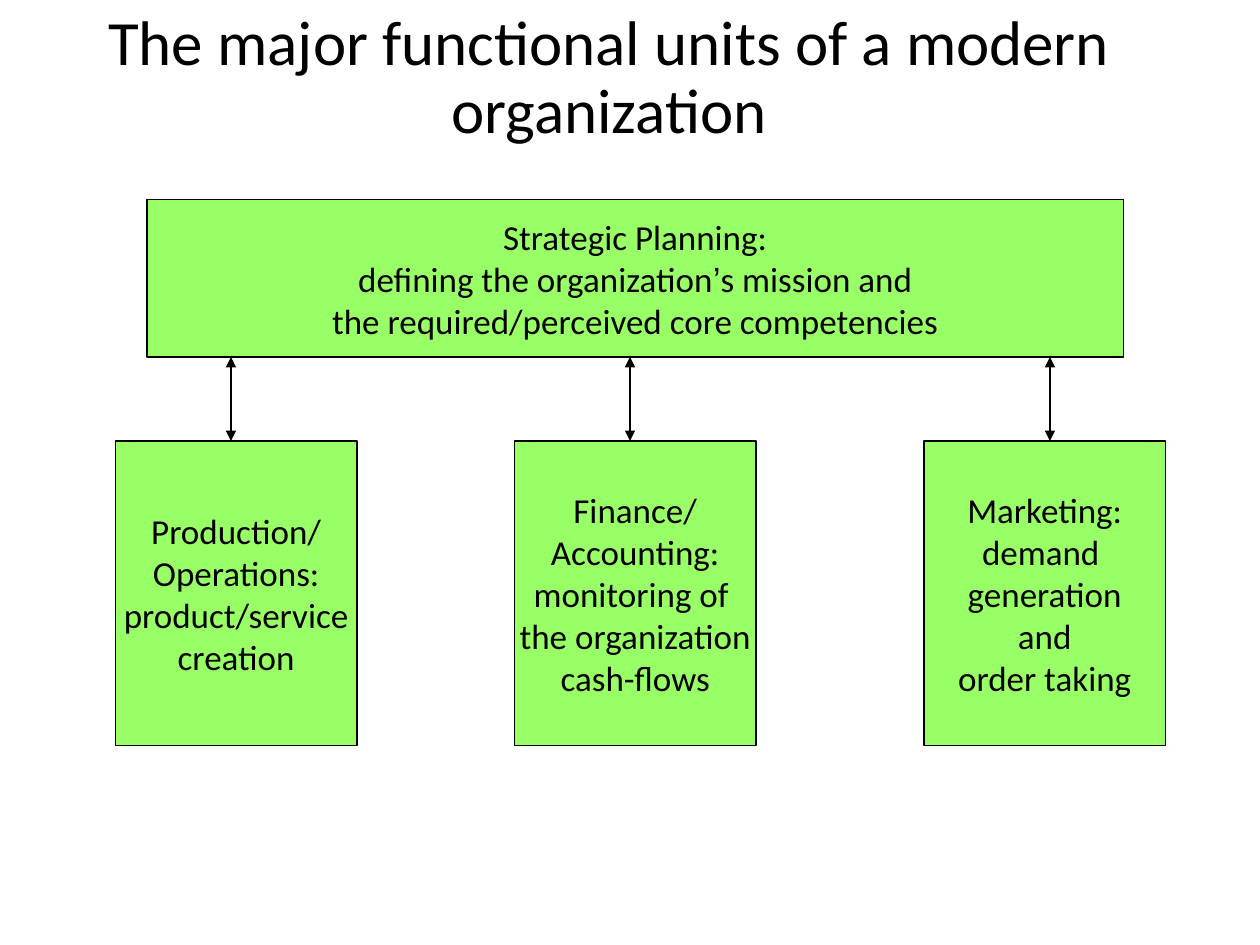
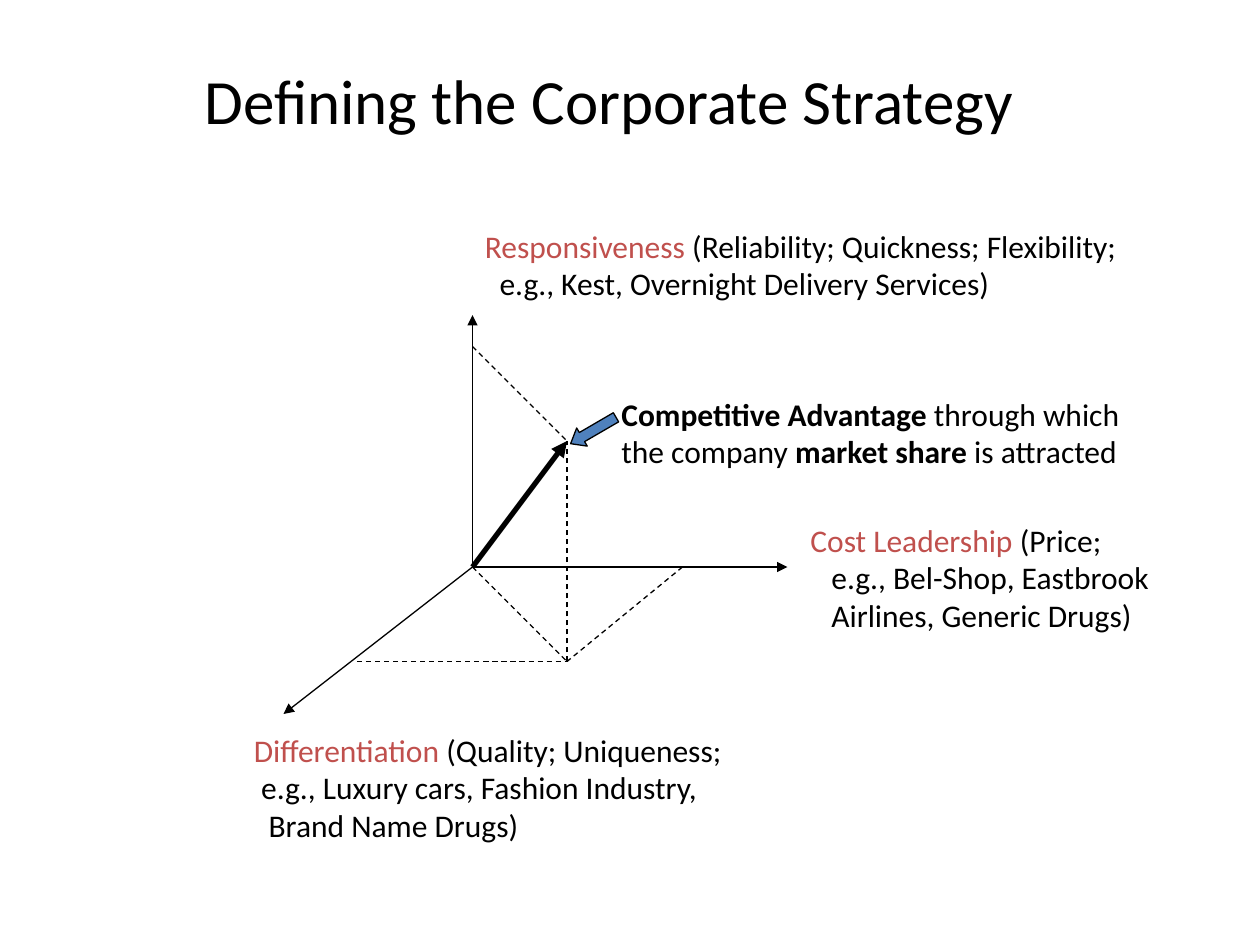
import lxml.etree
import pptx
import pptx.dml.color
import pptx.enum.dml
import pptx.enum.shapes
import pptx.enum.text
import pptx.oxml.ns
import pptx.util

PX = 7620
COLORS = {"ink": "000000", "unit": "99FF66", "dimension": "C0504D", "pointer": "4F81BD"}
BOLD = {"bold": True}
DIMENSION = {"color": "dimension"}
ALIGN = pptx.enum.text.PP_ALIGN
ANCHOR = pptx.enum.text.MSO_ANCHOR
SHAPE = pptx.enum.shapes.MSO_SHAPE


def rgb(name):
    return pptx.dml.color.RGBColor.from_string(COLORS[name])


def emu(*lengths):
    return [pptx.util.Emu(length * PX) for length in lengths]


class Deck:
    font = "Calibri"

    def __init__(self, width, height):
        self.prs = pptx.Presentation()
        self.prs.slide_width, self.prs.slide_height = emu(width, height)
        self.slide = None

    def add_slide(self, title, top, line_spacing=1.0):
        self.slide = self.prs.slides.add_slide(self.prs.slide_layouts[6])
        heading = self.slide.shapes.add_textbox(*emu(70, top, 1020, 150))
        self.fill_text(heading, [title], 36, align=ALIGN.CENTER, line_spacing=line_spacing,
                       vertical_anchor=ANCHOR.MIDDLE, word_wrap=True)

    def fill_text(self, holder, lines, size, indents=(), align=ALIGN.LEFT, line_spacing=1.0, **frame_format):
        frame = holder.text_frame
        for name, value in frame_format.items():
            setattr(frame, name, value)
        for index, line in enumerate(lines):
            paragraph = frame.paragraphs[0] if index == 0 else frame.add_paragraph()
            paragraph.alignment = align
            paragraph.line_spacing = line_spacing
            if index < len(indents):
                paragraph._p.get_or_add_pPr().set("marL", str(indents[index] * PX))
            for piece in [line] if isinstance(line, str) else line:
                text, changes = (piece, {}) if isinstance(piece, str) else piece
                style = {"name": self.font, "size": pptx.util.Pt(size), "bold": False, "color": "ink", **changes}
                run = paragraph.add_run()
                run.text = text
                run.font.color.rgb = rgb(style.pop("color"))
                for name, value in style.items():
                    setattr(run.font, name, value)

    def shape(self, kind, box, fill):
        shape = self.slide.shapes.add_shape(kind, *emu(*box))
        shape.shadow.inherit = False
        shape.fill.solid()
        shape.fill.fore_color.rgb = rgb(fill)
        shape.line.color.rgb = rgb("ink")
        shape.line.width = pptx.util.Pt(0.75)
        return shape

    def unit(self, box, lines):
        self.fill_text(self.shape(SHAPE.RECTANGLE, box, "unit"), lines, 20, align=ALIGN.CENTER,
                       vertical_anchor=ANCHOR.MIDDLE, word_wrap=False)

    def label(self, box, lines, indents=()):
        self.fill_text(self.slide.shapes.add_textbox(*emu(*box)), lines, 18, indents, word_wrap=False,
                       auto_size=pptx.enum.text.MSO_AUTO_SIZE.SHAPE_TO_FIT_TEXT)

    def line(self, start, end, width=0.75, dashed=False, heads=()):
        connector = self.slide.shapes.add_connector(
            pptx.enum.shapes.MSO_CONNECTOR.STRAIGHT, *emu(*start, *end))
        connector.line.color.rgb = rgb("ink")
        connector.line.width = pptx.util.Pt(width)
        if dashed:
            connector.line.dash_style = pptx.enum.dml.MSO_LINE.DASH
        qn = pptx.oxml.ns.qn
        for head in heads:
            lxml.etree.SubElement(connector.line._get_or_add_ln(), qn(f"a:{head}"), type="triangle")
        lxml.etree.SubElement(connector._element.spPr, qn("a:effectLst"))

    def pointer(self, box, rotation):
        arrow = self.shape(SHAPE.RIGHT_ARROW, box, "pointer")
        arrow.rotation = rotation
        arrow.adjustments[0], arrow.adjustments[1] = 0.5, 0.625


def functional_units(deck):
    deck.add_slide("The major functional units of a modern organization", 0, 0.9)
    planning_bottom, unit_top = 340, 420
    deck.unit((140, 190, 930, planning_bottom - 190), [
        "Strategic Planning:",
        ["defining the organization", ("’", {"name": "Arial"}), "s mission and"],
        "the required/perceived core competencies",
    ])
    units = [
        (110, 220, ["Production/", "Operations:", "product/service", "creation"]),
        (490, 600, ["Finance/", "Accounting:", "monitoring of ", "the organization", "cash-flows"]),
        (880, 1000, ["Marketing:", "demand ", "generation", "and", "order taking"]),
    ]
    for left, link, lines in units:
        deck.unit((left, unit_top, 230, 290), lines)
        deck.line((link, planning_bottom), (link, unit_top), heads=("headEnd", "tailEnd"))


def corporate_strategy(deck):
    deck.add_slide("Defining the Corporate Strategy", 20)
    origin, advantage, floor = (450, 540), (540, 420), (540, 630)
    responsiveness, cost, differentiation = (450, 330), (650, 540), (340, 630)

    for axis_tip in [(450, 300), (750, 540), (270, 680)]:
        deck.line(origin, axis_tip, heads=("tailEnd",))
    for start, end in [(cost, floor), (differentiation, floor), (floor, advantage),
                       (origin, floor), (responsiveness, advantage)]:
        deck.line(start, end, dashed=True)
    deck.line(origin, advantage, width=3, heads=("tailEnd",))

    deck.label((230, 690, 474, 120), [
        [("Differentiation", DIMENSION), " (Quality; Uniqueness;"],
        "e.g., Luxury cars, Fashion Industry,",
        "Brand Name Drugs)",
    ], (0, 7, 14))
    deck.label((760, 490, 371, 120), [
        [("Cost Leadership", DIMENSION), " (Price;"],
        "e.g., Bel-Shop, Eastbrook",
        "Airlines, Generic Drugs)",
    ], (0, 20, 20))
    deck.label((450, 210, 656, 84), [
        [("Responsiveness", DIMENSION), " (Reliability; Quickness; Flexibility;"],
        "e.g., Kest, Overnight Delivery Services)",
    ], (0, 14))
    deck.label((580, 370, 509, 84), [
        [("Competitive Advantage ", BOLD), "through which"],
        ["the company", (" market share ", BOLD), "is attracted"],
    ])
    deck.pointer((540, 400, 50, 20), 149.8)


def main():
    deck = Deck(1200, 900)
    functional_units(deck)
    corporate_strategy(deck)
    deck.prs.save("out.pptx")


if __name__ == "__main__":
    main()
